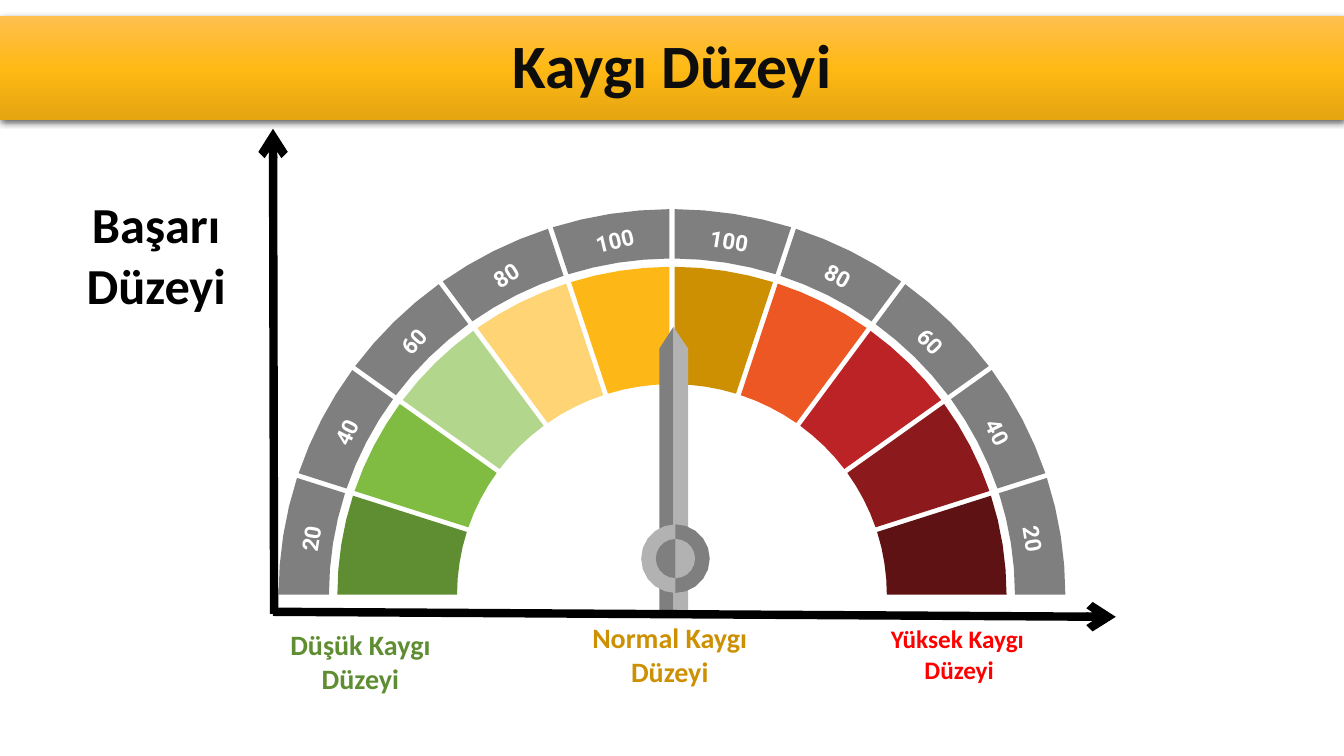
from dataclasses import dataclass
from math import asin, cos, degrees, radians, sin

from lxml import etree
from pptx import Presentation
from pptx.dml.color import RGBColor
from pptx.enum.shapes import MSO_CONNECTOR
from pptx.enum.text import MSO_ANCHOR, MSO_AUTO_SIZE, PP_ALIGN
from pptx.oxml import parse_xml
from pptx.oxml.ns import nsdecls, qn
from pptx.util import Pt

LEFT, CENTER = PP_ALIGN.LEFT, PP_ALIGN.CENTER
MIDDLE = MSO_ANCHOR.MIDDLE
NO_FIT, GROW = MSO_AUTO_SIZE.NONE, MSO_AUTO_SIZE.SHAPE_TO_FIT_TEXT
STRAIGHT = MSO_CONNECTOR.STRAIGHT


@dataclass(frozen=True)
class Theme:
    body_font: str = "Calibri"
    scale_font: str = "Roboto"
    title_size: int = 44
    axis_size: int = 36
    level_size: int = 20
    high_size: int = 18
    scale_size: int = 16
    title: str = "0D0D0D"
    black: str = "000000"
    white: str = "FFFFFF"
    grey: str = "7F7F7F"
    light_grey: str = "B2B2B2"
    low: str = "5F8D31"
    normal: str = "CD9002"
    high: str = "FF0000"
    band: tuple = ((0, "FFBF4E"), (50, "FFB915"), (100, "E5A510"))
    levels: tuple = ("5F8D31", "7FBC41", "B2D78C", "FED474", "FDB817",
                     "CD9002", "EC5724", "BB2326", "8C1A1D", "5E1213")


T = Theme()

# Gauge geometry in points; angles run clockwise from the vertical.
CX, CY, FLATTEN = 480, 424.8, 0.98
STEP, HALF_GAP = 18, 1.8
LEVEL_RING, SCALE_RING, NUMBER_RADIUS = (153.5, 239), (245, 281), 261
NUMBERS = [("20", -80.9), ("40", -63.7), ("60", -47.9), ("80", -32.6), ("100", -13.4),
           ("100", 8.9), ("80", 28.5), ("60", 45.7), ("40", 63), ("20", 80.8)]


def arc(cx, cy, r, start, end, pieces, flatten=1.0):
    """Points along an arc from start to end degrees."""
    angles = [radians(start + (end - start) * i / pieces) for i in range(pieces + 1)]
    return [(cx + r * sin(a), cy - r * flatten * cos(a)) for a in angles]


def polygon(shapes, points, color):
    points = [(Pt(x), Pt(y)) for x, y in points]
    builder = shapes.build_freeform(*points[0], scale=1.0)
    builder.add_line_segments(points[1:], close=True)
    sp = builder.convert_to_shape()
    sp.shadow.inherit = False
    sp.fill.solid()
    sp.fill.fore_color.rgb = RGBColor.from_string(color)
    sp.line.fill.background()


def wedge(shapes, i, ring, color):
    """Sector i of a ring, trimmed so that neighbours leave an even gap."""
    start, end = -90 + STEP * i, -90 + STEP * (i + 1)
    edges = []
    for r in ring:
        trim = degrees(asin(HALF_GAP / r))
        a = start + (trim if start > -90 else 0)
        b = end - (trim if end < 90 else 0)
        edges.append(arc(CX, CY, r, a, b, 4, FLATTEN))
    inner, outer = edges
    polygon(shapes, inner + outer[::-1], color)


def style_run(r, size, color, font):
    r.font.color.rgb = RGBColor.from_string(color)
    for name, value in {"size": Pt(size), "bold": True, "name": font}.items():
        setattr(r.font, name, value)


def text(shapes, box, lines, size, color, font=T.body_font, wrap=True, rotation=0, aligns=()):
    sp = shapes.add_textbox(*map(Pt, box))
    sp.rotation = rotation
    tf = sp.text_frame
    tf.word_wrap, tf.auto_size = wrap, GROW
    for i, line in enumerate(lines):
        p = tf.paragraphs[0] if i == 0 else tf.add_paragraph()
        p.alignment = aligns[i] if aligns else CENTER
        r = p.add_run()
        r.text = line
        style_run(r, size, color, font)


def title(s, words):
    sp = s.shapes.title
    box = {"left": 0, "top": 11.5, "width": 960, "height": 74.5}
    for name, value in box.items():
        setattr(sp, name, Pt(value))
    stops = "".join(f'<a:gs pos="{pos * 1000}"><a:srgbClr val="{color}"/></a:gs>'
                    for pos, color in T.band)
    sp_pr = sp.element.spPr
    sp_pr.append(parse_xml(
        f'<a:gradFill {nsdecls("a")} rotWithShape="1"><a:gsLst>{stops}</a:gsLst>'
        '<a:lin ang="5400000" scaled="0"/></a:gradFill>'))
    sp_pr.append(parse_xml(
        f'<a:effectLst {nsdecls("a")}><a:outerShdw blurRad="{Pt(4.5)}" dist="{Pt(1.5)}" '
        f'dir="5400000" algn="ctr" rotWithShape="0"><a:srgbClr val="{T.black}">'
        '<a:alpha val="63000"/></a:srgbClr></a:outerShdw></a:effectLst>'))
    tf = sp.text_frame
    tf.auto_size, tf.vertical_anchor = NO_FIT, MIDDLE
    p = tf.paragraphs[0]
    p.alignment, p.line_spacing = CENTER, 0.9
    r = p.add_run()
    r.text = words
    style_run(r, T.title_size, T.title, T.body_font)


def axis(s, start, end):
    line = s.shapes.add_connector(STRAIGHT, *map(Pt, start + end))
    line.line.width = Pt(6)
    line.line.color.rgb = RGBColor.from_string(T.black)
    sp_pr = line.element.spPr
    etree.SubElement(sp_pr.find(qn("a:ln")), qn("a:tailEnd"), type="arrow")
    etree.SubElement(sp_pr, qn("a:effectLst"))


def needle(s):
    shapes = s.shapes.add_group_shape().shapes
    x, tip, shoulder, bottom = 481, 233.5, 249, 438
    for edge, color in ((491.5, T.light_grey), (471, T.grey)):
        polygon(shapes, [(x, tip), (edge, shoulder), (edge, bottom), (x, bottom)], color)
    for r, left, right in ((24.5, T.light_grey, T.grey), (14, T.grey, T.light_grey)):
        polygon(shapes, arc(482.5, 399, r, -180, 0, 10), left)
        polygon(shapes, arc(482.5, 399, r, 0, 180, 10), right)


def scale(s):
    for i, (number, rotation) in enumerate(NUMBERS):
        shapes = s.shapes.add_group_shape().shapes
        wedge(shapes, i, SCALE_RING, T.grey)
        a = radians(-90 + STEP * (i + 0.5))
        x, y = CX + NUMBER_RADIUS * sin(a), CY - NUMBER_RADIUS * FLATTEN * cos(a)
        w, h = 14.4 + 9.3 * len(number), 26.6
        text(shapes, (x - w / 2, y - h / 2, w, h), [number], T.scale_size, T.white,
             T.scale_font, wrap=False, rotation=rotation)


def main():
    prs = Presentation()
    prs.slide_width, prs.slide_height = Pt(960), Pt(540)
    s = prs.slides.add_slide(prs.slide_layouts[5])
    title(s, "Kaygı Düzeyi")
    for i, color in enumerate(T.levels):
        wedge(s.shapes, i, LEVEL_RING, color)
    needle(s)
    scale(s)
    text(s.shapes, (54, 134.6, 115.2, 94.3), ["Başarı", "Düzeyi"], T.axis_size, T.black,
         wrap=False)
    text(s.shapes, (185.8, 445, 143.3, 55.4), ["Düşük Kaygı Düzeyi"], T.level_size, T.low)
    text(s.shapes, (390.2, 440, 176.4, 55.4), ["Normal Kaygı Düzeyi"], T.level_size, T.normal)
    text(s.shapes, (629.3, 442, 111.6, 51), ["Yüksek Kaygı", "Düzeyi"], T.high_size, T.high,
         aligns=(LEFT, CENTER))
    axis(s, (195, 437), (797, 440.6))
    axis(s, (195.8, 438.5), (195, 92))
    prs.save("out.pptx")


if __name__ == "__main__":
    main()
